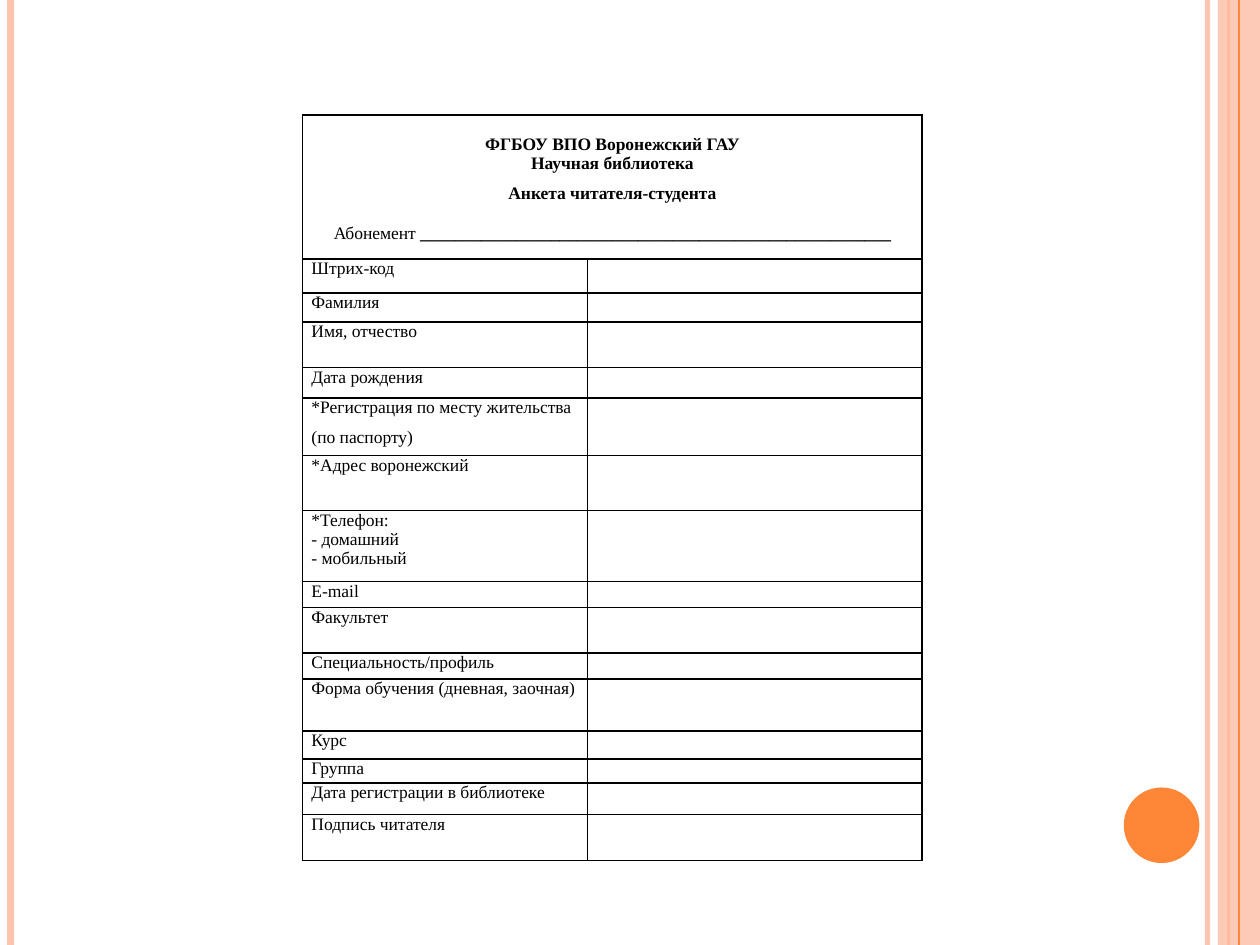
from pptx import Presentation
from pptx.dml.color import RGBColor
from pptx.enum.shapes import MSO_CONNECTOR as Connector, MSO_SHAPE as Preset
from pptx.enum.text import PP_ALIGN as Align
from pptx.oxml.ns import qn
from pptx.util import Pt
from lxml.etree import SubElement

WIDTH, HEIGHT = 720, 540
PEACH, ORANGE, BLACK = "FEC3AE", "FE8637", "000000"

# Form rows: label paragraphs and row height
FORM_ROWS = [
    (["Штрих-код"], 19.4),
    (["Фамилия"], 16.6),
    (["Имя, отчество"], 26.2),
    (["Дата рождения"], 17.4),
    (["*Регистрация по месту жительства", "(по паспорту)"], 32.9),
    (["*Адрес воронежский"], 31.4),
    (["*Телефон:", "- домашний", "- мобильный"], 40.6),
    (["E-mail"], 14.9),
    (["Факультет"], 26),
    (["Специальность/профиль"], 14.9),
    (["Форма обучения (дневная, заочная)"], 29.7),
    (["Курс"], 16),
    (["Группа"], 13.8),
    (["Дата регистрации в библиотеке"], 18),
    (["Подпись читателя"], 26.2),
]
HEADER_HEIGHT = 82.2


def color(value):
    return RGBColor.from_string(value)


def set_alpha(fill_parent, percent):
    for element in fill_parent.iter(qn("a:srgbClr")):
        SubElement(element, qn("a:alpha"), val=str(percent * 1000))


class SlideBuilder:
    font_name = "Times New Roman"
    font_size = 10

    def __init__(self, slide):
        self.slide = slide

    def vertical_line(self, x, line_color, width, alpha=None):
        line = self.slide.shapes.add_connector(
            Connector.STRAIGHT, Pt(x), Pt(0), Pt(x), Pt(HEIGHT))
        line.line.color.rgb = color(line_color)
        line.line.width = Pt(width)
        properties = line._element.spPr
        if alpha:
            set_alpha(properties, alpha)
        SubElement(properties, qn("a:effectLst"))

    def filled_shape(self, preset, left, top, width, height, fill, alpha=None):
        shape = self.slide.shapes.add_shape(
            preset, Pt(left), Pt(top), Pt(width), Pt(height))
        shape.shadow.inherit = False
        shape.fill.solid()
        shape.fill.fore_color.rgb = color(fill)
        shape.line.fill.background()
        if alpha:
            set_alpha(shape._element.spPr, alpha)

    def table(self, left, top, column_widths, row_heights):
        frame = self.slide.shapes.add_table(
            len(row_heights), len(column_widths), Pt(left), Pt(top),
            Pt(sum(column_widths)), Pt(sum(row_heights)))
        table = frame.table
        table.first_row = table.horz_banding = False
        for column, width in zip(table.columns, column_widths):
            column.width = Pt(width)
        for row, height in zip(table.rows, row_heights):
            row.height = Pt(height)
            for cell in row.cells:
                self.format_cell(cell)
        return table

    def format_cell(self, cell):
        cell.margin_left = cell.margin_right = Pt(5.2)
        cell.margin_top = cell.margin_bottom = 0
        properties = cell._tc.get_or_add_tcPr()
        for side in ("lnL", "lnR", "lnT", "lnB"):
            border = SubElement(properties, qn(f"a:{side}"), w=str(Pt(1)))
            fill = SubElement(border, qn("a:solidFill"))
            SubElement(fill, qn("a:srgbClr"), val=BLACK)
        cell.fill.background()
        # An empty cell takes its line height from the end mark
        SubElement(cell.text_frame.paragraphs[0]._p, qn("a:endParaRPr"),
                   sz=str(self.font_size * 100))

    def cell_text(self, cell, lines, bold=False, align=Align.LEFT):
        cell.text_frame.text = "\n".join(lines)
        for paragraph in cell.text_frame.paragraphs:
            paragraph.alignment = align
            font = paragraph.font
            font.name, font.size = self.font_name, Pt(self.font_size)
            font.bold = bold
            font.color.rgb = color(BLACK)
        return cell.text_frame.paragraphs


def main():
    presentation = Presentation()
    presentation.slide_width, presentation.slide_height = Pt(WIDTH), Pt(HEIGHT)
    slide = presentation.slides.add_slide(presentation.slide_layouts[6])
    builder = SlideBuilder(slide)

    # Side stripes and circle
    builder.vertical_line(690, PEACH, 3, alpha=93)
    builder.vertical_line(6, PEACH, 4.5)
    builder.vertical_line(702, ORANGE, 1.5)
    builder.filled_shape(Preset.RECTANGLE, 696, 0, 24, HEIGHT, PEACH, alpha=87)
    builder.vertical_line(708, ORANGE, 0.75)
    builder.filled_shape(Preset.OVAL, 642.2, 450, 43.2, 43.2, ORANGE)

    # Reader's form
    heights = [HEADER_HEIGHT] + [height for _, height in FORM_ROWS]
    table = builder.table(172.8, 65.8, [163, 191.2], heights)

    # Form heading across both columns
    heading = table.cell(0, 0)
    heading.merge(table.cell(0, 1))
    heading.margin_top = Pt(11.2)
    paragraphs = builder.cell_text(heading, [
        "ФГБОУ ВПО Воронежский ГАУ", "Научная библиотека",
        "Анкета читателя-студента", "Абонемент "], bold=True, align=Align.CENTER)
    for paragraph in paragraphs[2:]:
        paragraph.space_before = paragraph.space_after = Pt(6)
    subscription = paragraphs[3]
    subscription.runs[0].font.bold = False
    subscription.add_run().text = "_" * 54

    # Field labels
    for row, (lines, _) in enumerate(FORM_ROWS, start=1):
        paragraphs = builder.cell_text(table.cell(row, 0), lines)
        if len(lines) == 2:
            paragraphs[0].space_after = Pt(6)

    presentation.save("out.pptx")


if __name__ == "__main__":
    main()
